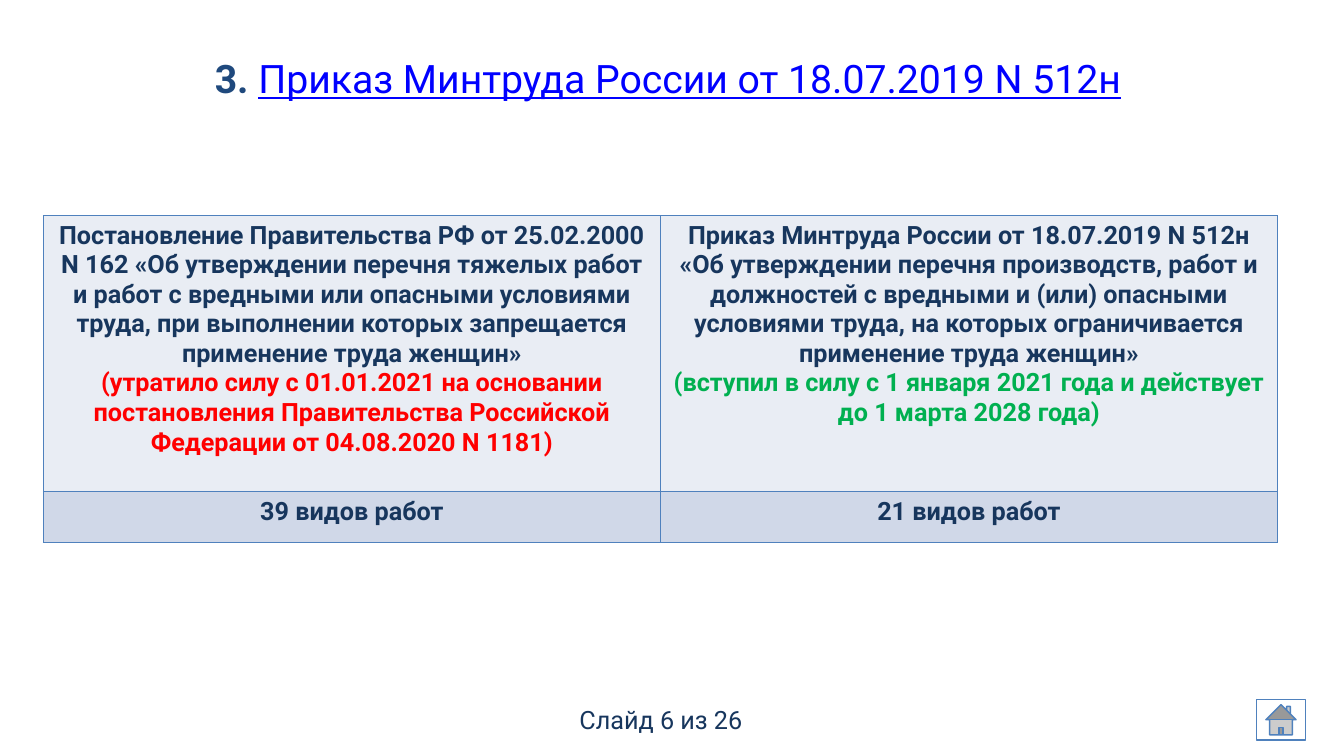
from lxml import etree
from pptx import Presentation
from pptx.dml.color import RGBColor
from pptx.enum.shapes import MSO_SHAPE
from pptx.enum.text import MSO_ANCHOR, PP_ALIGN
from pptx.oxml.ns import qn
from pptx.util import Inches, Pt

COLORS = {
    "title": "1F497D",
    "link": "0000FF",
    "text": "17365D",
    "repealed": "FF0000",
    "in_force": "00B050",
    "border": "4F81BD",
    "act_fill": "E9EDF4",
    "count_fill": "D0D8E8",
    "white": "FFFFFF",
}
FONT = "Roboto"

ACTS = [
    [
        ("Постановление Правительства РФ от 25.02.2000 N 162 «Об утверждении перечня "
         "тяжелых работ и работ с вредными или опасными условиями труда, при выполнении "
         "которых запрещается применение труда женщин»", "text"),
        ("(утратило силу с 01.01.2021 на основании постановления Правительства "
         "Российской Федерации от 04.08.2020 N 1181)", "repealed"),
    ],
    [
        ("Приказ Минтруда России от 18.07.2019 N 512н «Об утверждении перечня "
         "производств, работ и должностей с вредными и (или) опасными условиями труда, "
         "на которых ограничивается применение труда женщин»", "text"),
        ("(вступил в силу с 1 января 2021 года и действует до 1 марта 2028 года)",
         "in_force"),
    ],
]
COUNTS = [[("39 видов работ", "text")], [("21 видов работ", "text")]]
ROWS = [(ACTS, "act_fill", 2.74), (COUNTS, "count_fill", 0.5)]


def rgb(name):
    return RGBColor.from_string(COLORS[name])


def add_text(paragraph, text, color="text", size=18, bold=False, underline=False,
             align=PP_ALIGN.CENTER):
    paragraph.alignment = align
    run = paragraph.add_run()
    run.text = text
    font = run.font
    font.name, font.size = FONT, Pt(size)
    font.bold, font.underline = bold, underline
    font.color.rgb = rgb(color)


def set_borders(cell):
    properties = cell._tc.get_or_add_tcPr()
    for index, side in enumerate(("a:lnL", "a:lnR", "a:lnT", "a:lnB")):
        line = etree.Element(qn(side), w=str(Pt(1)))
        fill = etree.SubElement(line, qn("a:solidFill"))
        etree.SubElement(fill, qn("a:srgbClr"), val=COLORS["border"])
        properties.insert(index, line)


def fill_cell(cell, lines, fill):
    cell.fill.solid()
    cell.fill.fore_color.rgb = rgb(fill)
    set_borders(cell)
    frame = cell.text_frame
    for index, (text, color) in enumerate(lines):
        paragraph = frame.add_paragraph() if index else frame.paragraphs[0]
        add_text(paragraph, text, color, bold=True)


def add_title(slide):
    title = slide.shapes.title
    title.left, title.top = Inches(2.03), Inches(0.55)
    title.width, title.height = Inches(10.5), Inches(0.68)
    title.text_frame.vertical_anchor = MSO_ANCHOR.TOP
    heading = title.text_frame.paragraphs[0]
    heading.line_spacing = 0.89
    add_text(heading, "3. ", "title", 28, bold=True, align=PP_ALIGN.LEFT)
    add_text(heading, "Приказ Минтруда России от 18.07.2019 N 512н", "link", 28,
             underline=True, align=PP_ALIGN.LEFT)


def add_comparison(slide):
    table = slide.shapes.add_table(len(ROWS), len(ACTS), Inches(0.43), Inches(2.14),
                                   Inches(12.24), Inches(3.24)).table
    for row, (contents, fill, height) in zip(table.rows, ROWS):
        row.height = Inches(height)
        for cell, lines in zip(row.cells, contents):
            fill_cell(cell, lines, fill)


def add_page_label(slide):
    label = slide.shapes.add_textbox(Inches(5.08), Inches(6.94), Inches(2.95), Inches(0.4))
    label.text_frame.word_wrap = True
    add_text(label.text_frame.paragraphs[0], "Слайд 6 из 26")


def add_home_button(slide):
    button = slide.shapes.add_shape(MSO_SHAPE.ACTION_BUTTON_HOME, Inches(12.46),
                                    Inches(6.94), Inches(0.49), Inches(0.4))
    button.shadow.inherit = False
    button.fill.solid()
    button.fill.fore_color.rgb = rgb("white")
    button.line.color.rgb = rgb("border")
    button.line.width = Pt(1)


def main():
    deck = Presentation()
    deck.slide_width, deck.slide_height = Inches(13.33), Inches(7.5)
    slide = deck.slides.add_slide(deck.slide_layouts[5])
    add_title(slide)
    add_comparison(slide)
    add_page_label(slide)
    add_home_button(slide)
    deck.save("out.pptx")


if __name__ == "__main__":
    main()
